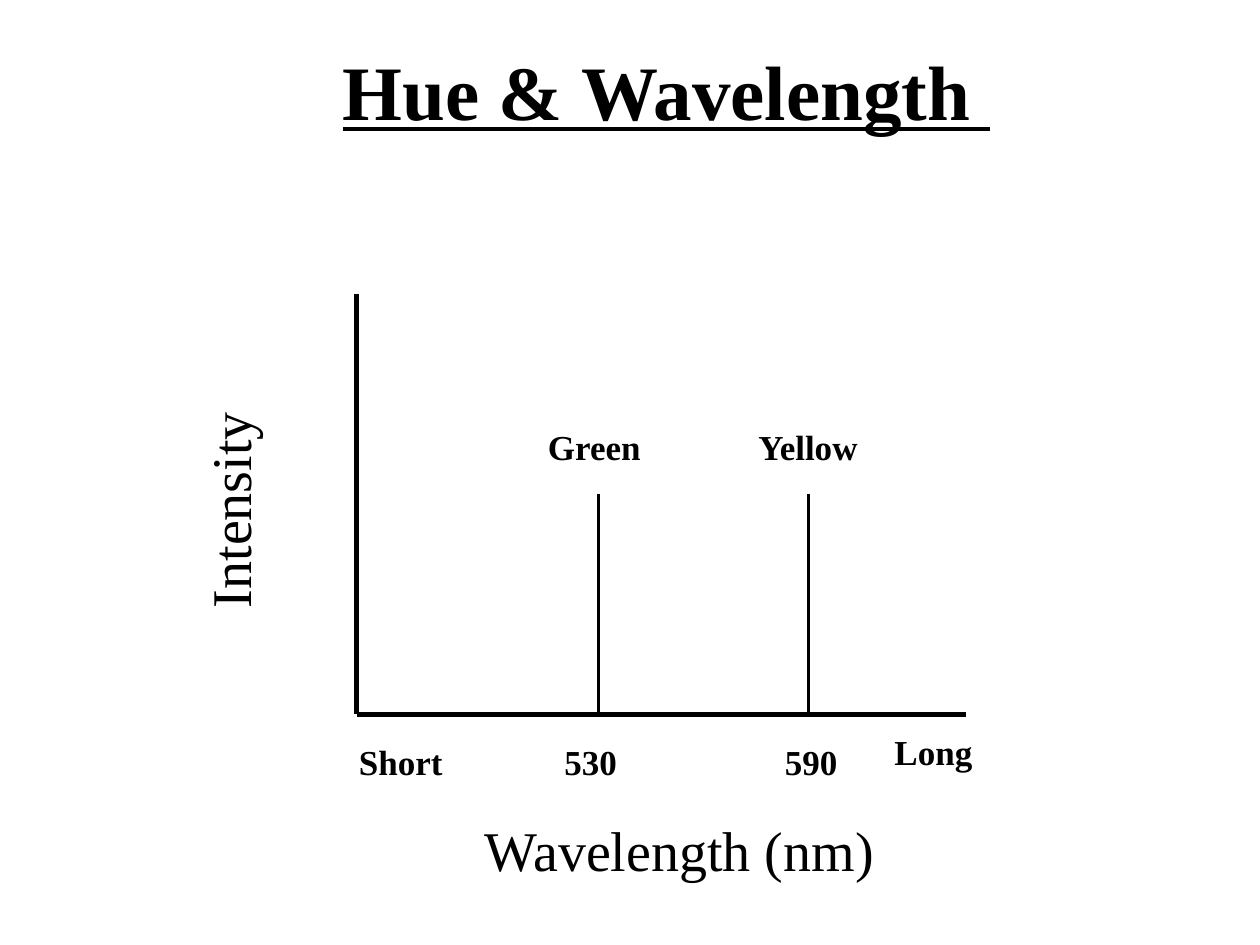
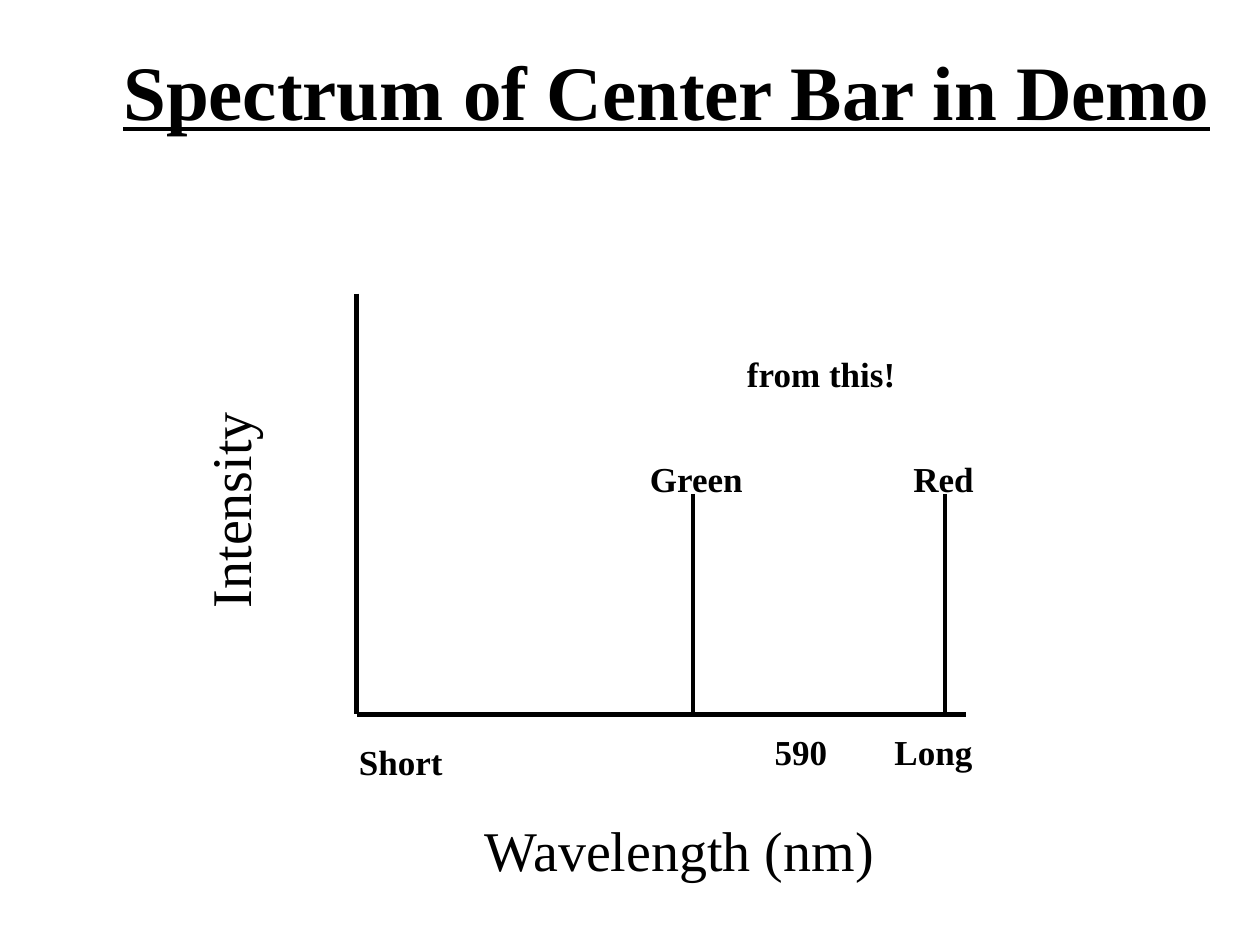
"""Build two slides that plot spectral lines as intensity against wavelength."""
from dataclasses import dataclass

import pptx
import pptx.dml.color
import pptx.enum.shapes
import pptx.enum.text
import pptx.oxml
import pptx.oxml.ns
import pptx.presentation
import pptx.slide
import pptx.text.text
import pptx.util
from pptx.util import Inches

COLORS = {"ink": "000000", "paper": "FFFFFF"}
FONT = "Times New Roman"
AXIS_LEFT, AXIS_RIGHT = 2.83, 7.67
AXIS_TOP, BASELINE = 2.33, 5.67
PEAK_TOP = 3.92
AXIS_WEIGHT, PEAK_WEIGHT = 3, 1.75


@dataclass(frozen=True)
class Label:
    text: str
    left: float
    top: float
    width: float
    height: float = 0.43
    size: int = 20
    bold: bool = True
    rotation: int = 0


@dataclass(frozen=True)
class Spectrum:
    title: str
    peaks: tuple[float, ...]
    labels: tuple[Label, ...]


SHARED_LABELS = (
    Label("Intensity", 0.94, 3.73, 1.76, 0.63, 32, False, 270),
    Label("Wavelength (nm)", 3.75, 6.42, 3.32, 0.63, 32, False),
    Label("Short", 2.75, 5.83, 0.88),
    Label("Long", 7, 5.75, 0.82),
)

SPECTRA = (
    Spectrum(
        "Hue & Wavelength ",
        (4.75, 6.42),
        (
            Label("530", 4.38, 5.83, 0.62),
            Label("590", 6.13, 5.83, 0.62),
            Label("Green", 4.25, 3.33, 0.94),
            Label("Yellow", 5.92, 3.33, 1.02),
        ),
    ),
    Spectrum(
        "Spectrum of Center Bar in Demo ",
        (5.5, 7.5),
        (
            Label("590", 6.05, 5.75, 0.62),
            Label("from this!", 5.83, 2.75, 1.38),
            Label("Green", 5.06, 3.58, 0.94),
            Label("Red", 7.15, 3.58, 0.68),
        ),
    ),
)


def color(name: str) -> pptx.dml.color.RGBColor:
    return pptx.dml.color.RGBColor.from_string(COLORS[name])


def draw_line(slide: pptx.slide.Slide, start: tuple[float, float],
              end: tuple[float, float], weight: float) -> None:
    line = slide.shapes.add_connector(
        pptx.enum.shapes.MSO_CONNECTOR.STRAIGHT,
        *(Inches(value) for value in (*start, *end)))
    line.line.color.rgb = color("ink")
    line.line.width = pptx.util.Pt(weight)
    line._element.spPr.append(pptx.oxml.parse_xml(
        f"<a:effectLst {pptx.oxml.ns.nsdecls('a')}/>"))


def draw_label(slide: pptx.slide.Slide, label: Label) -> pptx.text.text.TextFrame:
    box = slide.shapes.add_textbox(
        Inches(label.left), Inches(label.top), Inches(label.width), Inches(label.height))
    box.rotation = label.rotation
    frame = box.text_frame
    frame.word_wrap = False
    frame.auto_size = pptx.enum.text.MSO_AUTO_SIZE.SHAPE_TO_FIT_TEXT
    paragraph = frame.paragraphs[0]
    paragraph.text = label.text
    paragraph.font.name = FONT
    paragraph.font.size = pptx.util.Pt(label.size)
    paragraph.font.bold = label.bold
    paragraph.font.color.rgb = color("ink")
    return frame


def draw_title(slide: pptx.slide.Slide, text: str) -> None:
    frame = draw_label(slide, Label(text, 0.83, 0.17, 8.92, 1.08, 44))
    frame.word_wrap = True
    frame.auto_size = pptx.enum.text.MSO_AUTO_SIZE.NONE
    frame.vertical_anchor = pptx.enum.text.MSO_ANCHOR.MIDDLE
    frame.paragraphs[0].alignment = pptx.enum.text.PP_ALIGN.CENTER
    frame.paragraphs[0].font.underline = True


def add_spectrum(deck: pptx.presentation.Presentation, spectrum: Spectrum) -> None:
    slide = deck.slides.add_slide(deck.slide_layouts[6])
    slide.background.fill.solid()
    slide.background.fill.fore_color.rgb = color("paper")
    origin = (AXIS_LEFT, BASELINE)
    draw_line(slide, (AXIS_LEFT, AXIS_TOP), origin, AXIS_WEIGHT)
    draw_line(slide, origin, (AXIS_RIGHT, BASELINE), AXIS_WEIGHT)
    draw_title(slide, spectrum.title)
    for peak in spectrum.peaks:
        draw_line(slide, (peak, PEAK_TOP), (peak, BASELINE), PEAK_WEIGHT)
    for label in SHARED_LABELS + spectrum.labels:
        draw_label(slide, label)


def main() -> None:
    deck = pptx.Presentation()
    deck.slide_width, deck.slide_height = Inches(10), Inches(7.5)
    for spectrum in SPECTRA:
        add_spectrum(deck, spectrum)
    deck.save("out.pptx")


if __name__ == "__main__":
    main()
